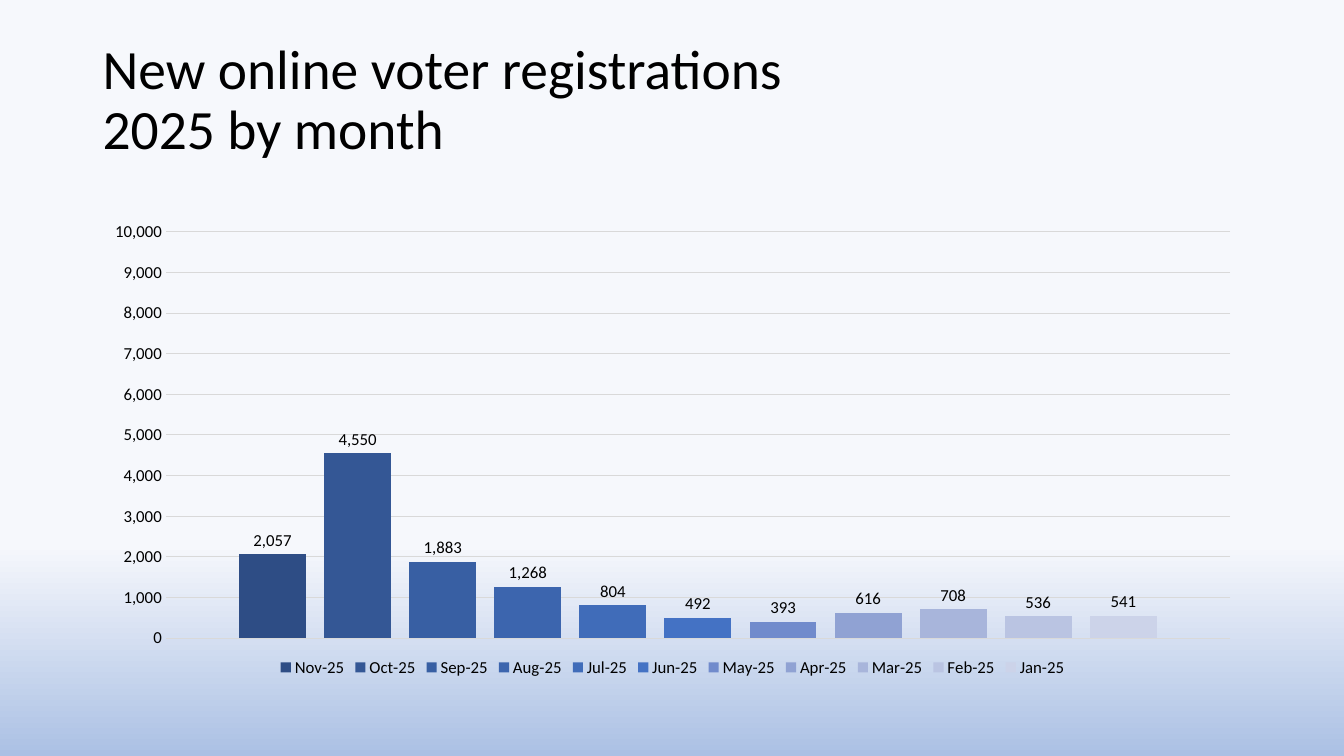
from lxml import etree
from pptx import Presentation
from pptx.chart.data import CategoryChartData
from pptx.dml.color import RGBColor
from pptx.enum.chart import XL_CHART_TYPE, XL_LABEL_POSITION, XL_LEGEND_POSITION, XL_TICK_MARK
from pptx.enum.text import MSO_ANCHOR
from pptx.util import Inches, Pt

COLUMNS = XL_CHART_TYPE.COLUMN_CLUSTERED
OUTSIDE_END = XL_LABEL_POSITION.OUTSIDE_END
BOTTOM = XL_LEGEND_POSITION.BOTTOM
NO_TICK = XL_TICK_MARK.NONE
MIDDLE = MSO_ANCHOR.MIDDLE
CHART_NS = "http://schemas.openxmlformats.org/drawingml/2006/chart"

REGISTRATIONS = [
    ("Nov-25", 2057, "2E4D85"),
    ("Oct-25", 4550, "345795"),
    ("Sep-25", 1883, "385FA3"),
    ("Aug-25", 1268, "3C65AE"),
    ("Jul-25", 804, "406CB9"),
    ("Jun-25", 492, "4472C4"),
    ("May-25", 393, "718BCC"),
    ("Apr-25", 616, "90A2D3"),
    ("Mar-25", 708, "A8B5DB"),
    ("Feb-25", 536, "BAC4E2"),
    ("Jan-25", 541, "CCD3E9"),
]


def color(value):
    return RGBColor.from_string(value)


def style_font(font, size, ink="000000", face="Calibri"):
    font.size = Pt(size)
    font.name = face
    font.color.rgb = color(ink)


def write_text(frame, text, size, ink="000000", spacing=1.0, anchor=MIDDLE):
    frame.word_wrap = True
    frame.vertical_anchor = anchor
    paragraph = frame.paragraphs[0]
    paragraph.line_spacing = spacing
    for index, line in enumerate(text.split("\n")):
        if index:
            paragraph.add_line_break()
        run = paragraph.add_run()
        run.text = line
        style_font(run.font, size, ink)


class SlideBuilder:
    number_format = "#,##0"
    label_size = 12
    grid_color = "D9D9D9"

    def __init__(self, slide):
        self.slide = slide

    def background(self, stops, angle):
        fill = self.slide.background.fill
        fill.gradient()
        fill.gradient_angle = angle
        for stop, (position, shade) in zip(fill.gradient_stops, stops):
            stop.position = position
            stop.color.rgb = color(shade)

    def title(self, text, left, top, width, height):
        box = self.slide.shapes.add_textbox(
            Inches(left), Inches(top), Inches(width), Inches(height))
        write_text(box.text_frame, text, size=39.6, spacing=0.9)

    def column_chart(self, records, maximum, step, left, top, width, height, plot_layout):
        data = CategoryChartData(number_format=self.number_format)
        data.categories = ["1"]
        for month, count, _ in records:
            data.add_series(month, [count])
        chart = self.slide.shapes.add_chart(
            COLUMNS, Inches(left), Inches(top), Inches(width), Inches(height), data).chart
        style_font(chart.font, 10)
        chart.has_title = False
        chart.has_legend = True
        chart.legend.position = BOTTOM
        chart.legend.include_in_layout = False
        style_font(chart.legend.font, self.label_size)
        chart.category_axis.visible = False
        self.count_axis(chart.value_axis, maximum, step)
        plot = chart.plots[0]
        plot.gap_width = 219
        plot.overlap = -27
        plot.vary_by_categories = False
        for series, (_, _, shade) in zip(plot.series, records):
            series.format.fill.solid()
            series.format.fill.fore_color.rgb = color(shade)
            self.count_labels(series.data_labels)
        self.place_plot(chart, plot_layout)

    def count_axis(self, axis, maximum, step):
        axis.minimum_scale = 0
        axis.maximum_scale = maximum
        axis.major_unit = step
        axis.major_tick_mark = NO_TICK
        axis.minor_tick_mark = NO_TICK
        axis.format.line.fill.background()
        axis.has_major_gridlines = True
        grid = axis.major_gridlines.format.line
        grid.color.rgb = color(self.grid_color)
        grid.width = Pt(0.75)
        self.count_format(axis.tick_labels)

    def count_labels(self, labels):
        labels.show_value = True
        labels.position = OUTSIDE_END
        self.count_format(labels)

    def count_format(self, labels):
        labels.number_format = self.number_format
        labels.number_format_is_linked = False
        style_font(labels.font, self.label_size)

    def place_plot(self, chart, plot_layout):
        plot_area = chart._chartSpace.find(f".//{{{CHART_NS}}}plotArea")
        layout = plot_area.find(f"{{{CHART_NS}}}layout")
        if layout is None:
            layout = etree.Element(f"{{{CHART_NS}}}layout")
            plot_area.insert(0, layout)
        manual = etree.SubElement(layout, f"{{{CHART_NS}}}manualLayout")
        settings = [("layoutTarget", "inner"), ("xMode", "edge"), ("yMode", "edge")]
        settings += zip("xywh", plot_layout)
        for tag, value in settings:
            etree.SubElement(manual, f"{{{CHART_NS}}}{tag}").set("val", str(value))


def main():
    presentation = Presentation()
    presentation.slide_width = Inches(13.33)
    presentation.slide_height = Inches(7.5)
    builder = SlideBuilder(presentation.slides.add_slide(presentation.slide_layouts[6]))
    builder.background([(0.72, "F6F8FC"), (1.0, "ABC0E4")], angle=270)
    builder.title("New online voter registrations\n2025 by month", 0.92, 0.4, 11.5, 1.21)
    builder.column_chart(REGISTRATIONS, 10000, 1000, 0.92, 2, 11.5, 4.76,
                         plot_layout=(0.063, 0.063, 0.918, 0.847))
    presentation.save("out.pptx")


if __name__ == "__main__":
    main()
